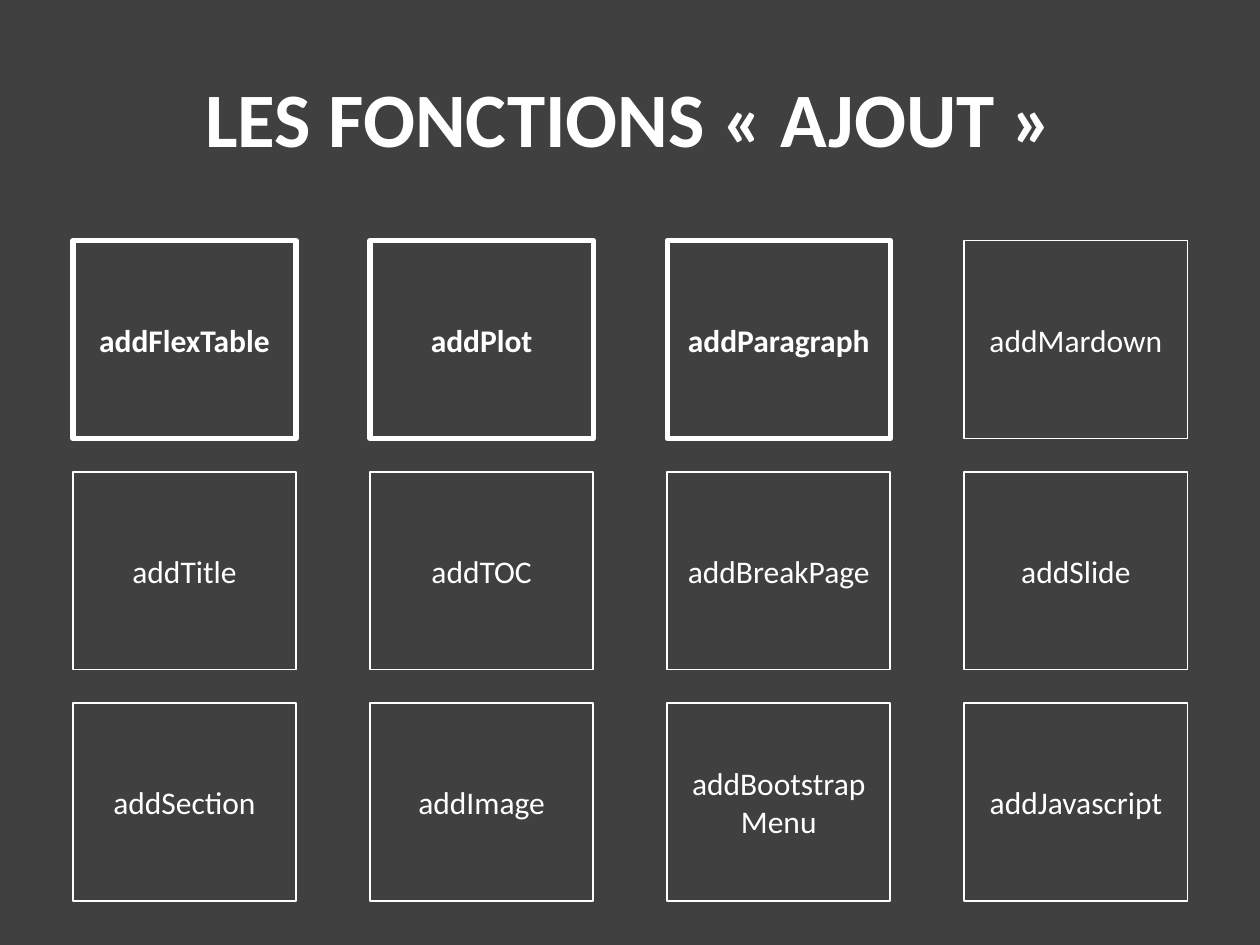
from pptx import Presentation
from pptx.dml.color import RGBColor
from pptx.enum.shapes import MSO_SHAPE
from pptx.enum.text import MSO_ANCHOR, PP_ALIGN
from pptx.util import Cm, Pt

BACKGROUND = "404040"
FOREGROUND = "FFFFFF"
FUNCTIONS = [
    ["addFlexTable", "addPlot", "addParagraph", "addMardown"],
    ["addTitle", "addTOC", "addBreakPage", "addSlide"],
    ["addSection", "addImage", "addBootstrapMenu", "addJavascript"],
]
MAIN_FUNCTIONS = {"addFlexTable", "addPlot", "addParagraph"}


def color(hex_code):
    return RGBColor.from_string(hex_code)


def write_centered(shape, text, size, bold):
    frame = shape.text_frame
    frame.word_wrap = True
    frame.vertical_anchor = MSO_ANCHOR.MIDDLE
    paragraph = frame.paragraphs[0]
    paragraph.alignment = PP_ALIGN.CENTER
    run = paragraph.add_run()
    run.text = text
    font_format = {"name": "Calibri", "size": Pt(size), "bold": bold}
    for attribute, value in font_format.items():
        setattr(run.font, attribute, value)
    run.font.color.rgb = color(FOREGROUND)


prs = Presentation()
prs.slide_width, prs.slide_height = Cm(25.4), Cm(19.05)
slide = prs.slides.add_slide(prs.slide_layouts[5])
slide.background.fill.solid()
slide.background.fill.fore_color.rgb = color(BACKGROUND)

# Title
heading = slide.shapes.title
heading_place = {"left": Cm(1.27), "top": Cm(0.76), "width": Cm(22.86), "height": Cm(3.18)}
for attribute, value in heading_place.items():
    setattr(heading, attribute, value)
write_centered(heading, "LES FONCTIONS « AJOUT »", 44, True)

# Grid of functions, the main ones in bold with a thick border
grid_left, grid_top = Cm(1.47), Cm(4.85)
column_step, row_step = Cm(5.99), Cm(4.66)
for row, names in enumerate(FUNCTIONS):
    for column, name in enumerate(names):
        is_main = name in MAIN_FUNCTIONS
        function_box = slide.shapes.add_shape(
            MSO_SHAPE.RECTANGLE,
            grid_left + column * column_step,
            grid_top + row * row_step,
            Cm(4.5),
            Cm(3.99),
        )
        function_box.shadow.inherit = False
        function_box.fill.background()
        function_box.line.color.rgb = color(FOREGROUND)
        function_box.line.width = Pt(3 if is_main else 1)
        write_centered(function_box, name, 18, is_main)

prs.save("out.pptx")
